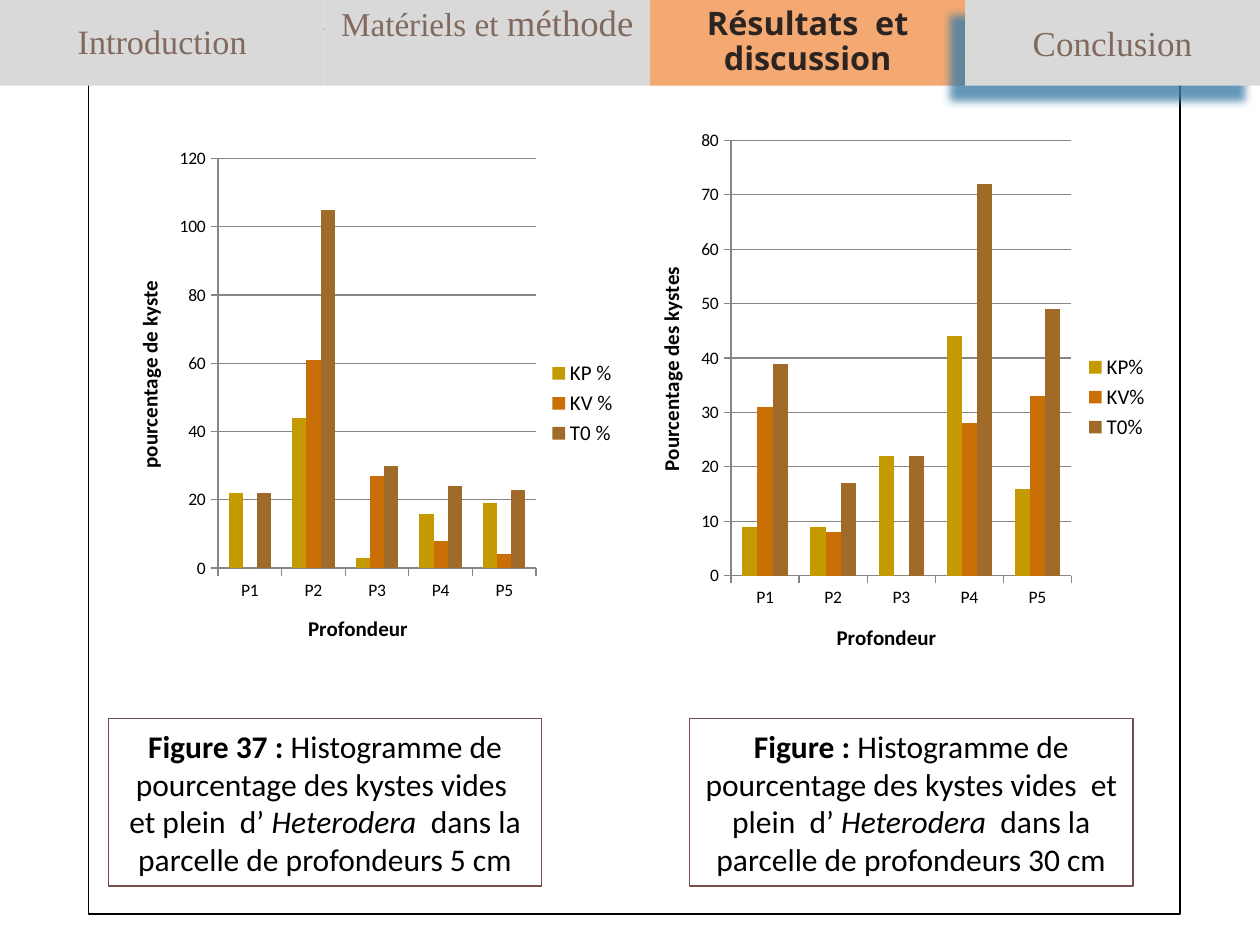
from lxml.etree import SubElement
from pptx import Presentation
from pptx.chart.data import CategoryChartData
from pptx.dml.color import RGBColor
from pptx.enum.chart import XL_CHART_TYPE as ChartType, XL_LEGEND_POSITION as LegendPosition
from pptx.enum.chart import XL_TICK_MARK as TickMark
from pptx.enum.shapes import MSO_SHAPE as Preset
from pptx.enum.text import MSO_ANCHOR as Anchor, PP_ALIGN as Align
from pptx.oxml import parse_xml
from pptx.oxml.ns import nsdecls, qn
from pptx.util import Pt

WHITE = RGBColor(0xFF, 0xFF, 0xFF)
BLACK = RGBColor(0, 0, 0)
GREY = RGBColor(0xD9, 0xD9, 0xD9)
ORANGE = RGBColor(0xF4, 0xA9, 0x73)
TAUPE = RGBColor(0x82, 0x69, 0x5E)
DARK = RGBColor(0x2B, 0x24, 0x20)
MAROON = RGBColor(0x76, 0x4E, 0x4E)
AXIS = RGBColor(0x86, 0x86, 0x86)
SHADOW = RGBColor(0x3F, 0x7F, 0xA8)
SERIES = (RGBColor(0xC5, 0x9A, 0x00), RGBColor(0xC9, 0x6F, 0x06), RGBColor(0xA0, 0x6A, 0x28))

TAB_HEIGHT = 49
SITES = ("P1", "P2", "P3", "P4", "P5")


class SlideBuilder:
    body_font = "Calibri"
    tab_font = "Times New Roman"
    title_font = "Open Sans"

    def __init__(self, slide):
        self.slide = slide

    def style_font(self, font, name, size, color, bold=False):
        font.name, font.size, font.bold = name, Pt(size), bold
        font.color.rgb = color

    def box(self, left, top, width, height, fill, line=None):
        shape = self.slide.shapes.add_shape(
            Preset.RECTANGLE, Pt(left), Pt(top), Pt(width), Pt(height))
        shape.shadow.inherit = False
        shape.fill.solid()
        shape.fill.fore_color.rgb = fill
        if line is None:
            shape.line.fill.background()
        else:
            shape.line.color.rgb = line
            shape.line.width = Pt(1)
        return shape

    def tab(self, left, width, runs, anchor=Anchor.MIDDLE, spacing=1.0):
        shape = self.box(left, 0, width, TAB_HEIGHT, GREY)
        frame = shape.text_frame
        frame.margin_top = frame.margin_bottom = 0
        frame.vertical_anchor = anchor
        paragraph = frame.paragraphs[0]
        paragraph.alignment = Align.CENTER
        paragraph.line_spacing = spacing
        for text, size in runs:
            run = paragraph.add_run()
            run.text = text
            self.style_font(run.font, self.tab_font, size, TAUPE)
        return shape

    def title(self, left, width, text):
        shape = self.slide.shapes.title
        shape.element.getparent().append(shape.element)
        shape.left, shape.top, shape.width, shape.height = Pt(left), 0, Pt(width), Pt(TAB_HEIGHT)
        shape.fill.solid()
        shape.fill.fore_color.rgb = ORANGE
        frame = shape.text_frame
        frame.text = text
        frame.vertical_anchor = Anchor.MIDDLE
        frame.margin_top = frame.margin_bottom = 0
        for paragraph in frame.paragraphs:
            paragraph.alignment = Align.CENTER
            paragraph.line_spacing = 0.9
            self.style_font(paragraph.font, self.title_font, 18.5, DARK, True)

    def cast_shadow(self, shape):
        properties = shape.element.spPr
        properties.remove(properties.find(qn("a:effectLst")))
        properties.append(parse_xml(
            f'<a:effectLst {nsdecls("a")}><a:outerShdw blurRad="63500" dist="152400" dir="8100000" '
            f'algn="tr" rotWithShape="0"><a:srgbClr val="{SHADOW}"><a:alpha val="80000"/>'
            '</a:srgbClr></a:outerShdw></a:effectLst>'))

    def caption(self, left, width, label, depth):
        frame = self.box(left, 410.5, width, 96, WHITE, MAROON).text_frame
        frame.word_wrap = True
        frame.vertical_anchor = Anchor.MIDDLE
        paragraph = frame.paragraphs[0]
        paragraph.alignment = Align.CENTER
        self.style_font(paragraph.font, self.body_font, 18, BLACK)
        runs = (
            (label, True, False),
            (" Histogramme de pourcentage des kystes vides  et plein  d’ ", False, False),
            ("Heterodera  ", False, True),
            (f"dans la parcelle de profondeurs {depth} cm", False, False),
        )
        for text, bold, italic in runs:
            run = paragraph.add_run()
            run.text = text
            run.font.bold, run.font.italic = bold, italic

    def axis(self, axis, title):
        axis.major_tick_mark = TickMark.OUTSIDE
        axis.minor_tick_mark = TickMark.NONE
        axis.format.line.color.rgb = AXIS
        frame = axis.axis_title.text_frame
        frame.text = title
        self.style_font(frame.paragraphs[0].font, self.body_font, 12, BLACK, True)

    def column_chart(self, place, plot_area, value_title, maximum, step, series):
        data = CategoryChartData()
        data.categories = SITES
        for name, values in series.items():
            data.add_series(name, values)
        chart = self.slide.shapes.add_chart(
            ChartType.COLUMN_CLUSTERED, *map(Pt, place), data).chart
        chart.has_title = False
        self.style_font(chart.font, self.body_font, 10, BLACK)
        chart.has_legend = True
        chart.legend.position = LegendPosition.RIGHT
        chart.legend.include_in_layout = False
        self.style_font(chart.legend.font, self.body_font, 12, BLACK)
        self.axis(chart.category_axis, "Profondeur")
        value_axis = chart.value_axis
        self.axis(value_axis, value_title)
        value_axis.minimum_scale, value_axis.maximum_scale = 0, maximum
        value_axis.major_unit = step
        value_axis.major_gridlines.format.line.color.rgb = AXIS
        plot = chart.plots[0]
        plot.gap_width, plot.overlap = 150, 0
        plot.vary_by_categories = False
        for column, color in zip(plot.series, SERIES):
            column.format.fill.solid()
            column.format.fill.fore_color.rgb = color
        self.place_plot(chart, plot_area)

    def place_plot(self, chart, plot_area):
        area = chart.element.chart.plotArea
        for old in area.findall(qn("c:layout")):
            area.remove(old)
        layout = parse_xml(f'<c:layout {nsdecls("c")}><c:manualLayout/></c:layout>')
        settings = dict(layoutTarget="inner", xMode="edge", yMode="edge")
        settings.update(zip("xywh", plot_area))
        for key, value in settings.items():
            SubElement(layout[0], qn(f"c:{key}")).set("val", str(value))
        area.insert(0, layout)


def main():
    presentation = Presentation()
    presentation.slide_width, presentation.slide_height = Pt(720), Pt(540)
    slide = presentation.slides.add_slide(presentation.slide_layouts[5])
    builder = SlideBuilder(slide)

    builder.box(50.5, 16.5, 624, 506, WHITE, BLACK)
    builder.tab(0, 185.5, [("Introduction", 19.5)], Anchor.TOP, 1.5)
    builder.tab(185.5, 186, [("Matériels et ", 19), ("méthode", 21)], Anchor.TOP)
    builder.title(371.5, 180, "Résultats  et\ndiscussion")
    builder.cast_shadow(builder.tab(551.5, 168.5, [("Conclusion", 20)]))

    builder.column_chart(
        (62, 78.5, 298, 304), (0.21, 0.04, 0.61, 0.77), "pourcentage de kyste", 120, 20,
        {"KP %": (22, 44, 3, 16, 19), "KV %": (0, 61, 27, 8, 4), "T0 %": (22, 105, 30, 24, 23)})
    builder.column_chart(
        (360, 67.5, 304, 319), (0.19, 0.04, 0.64, 0.78), "Pourcentage des kystes", 80, 10,
        {"KP%": (9, 9, 22, 44, 16), "KV%": (31, 8, 0, 28, 33), "T0%": (39, 17, 22, 72, 49)})

    builder.caption(62, 247.5, "Figure 37 :", 5)
    builder.caption(394, 253.5, "Figure :", 30)
    presentation.save("out.pptx")


if __name__ == "__main__":
    main()
